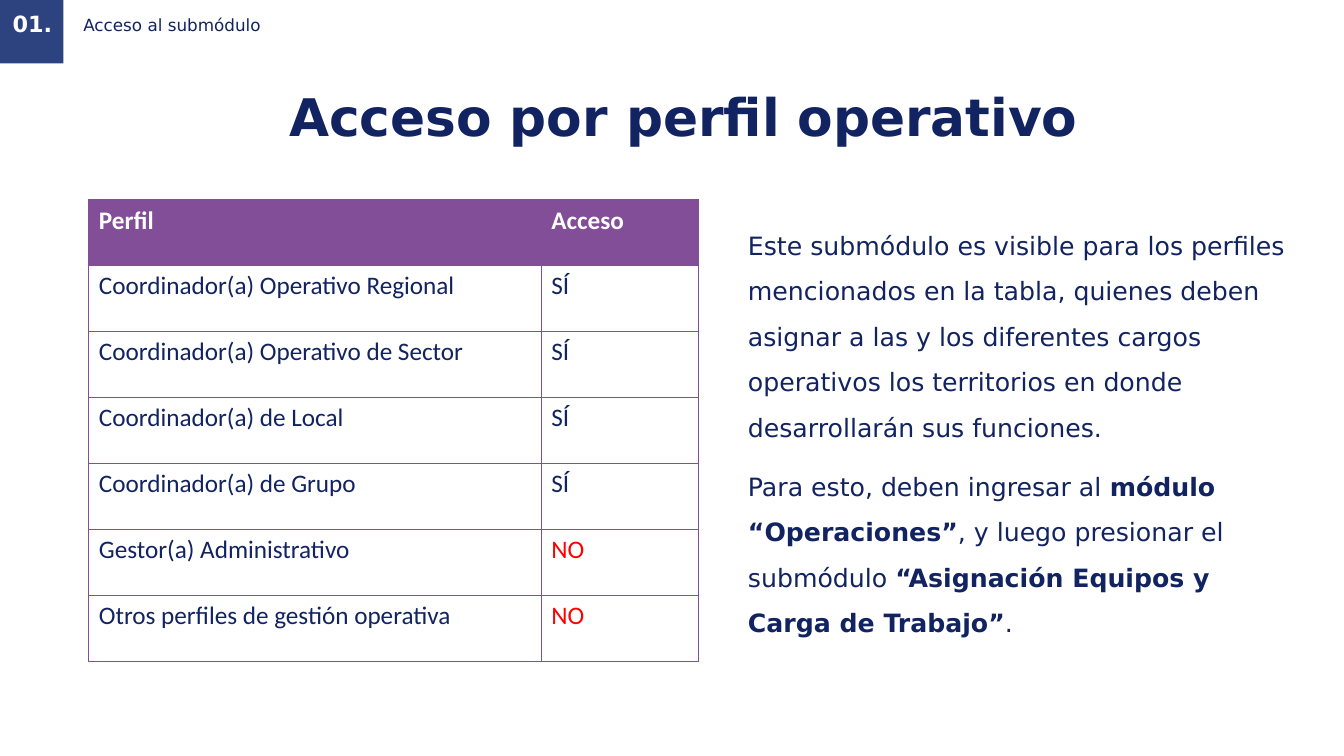
import dataclasses

import pptx
import pptx.dml.color
import pptx.enum.shapes
import pptx.enum.text
import pptx.oxml
import pptx.oxml.ns
import pptx.util

Cm = pptx.util.Cm
Align = pptx.enum.text.PP_ALIGN
Anchor = pptx.enum.text.MSO_ANCHOR


@dataclasses.dataclass(frozen=True)
class Theme:
    navy: str = "122361"
    blue: str = "2C437F"
    purple: str = "824E98"
    red: str = "FF0000"
    white: str = "FFFFFF"
    text_font: str = "DejaVu Sans"
    table_font: str = "Calibri"
    title_size: int = 37
    body_size: int = 18
    number_size: int = 16
    label_size: int = 12
    border_width: int = 1


def rgb(color):
    return pptx.dml.color.RGBColor.from_string(color)


class SlideBuilder:
    def __init__(self, slide, theme):
        self.slide = slide
        self.theme = theme

    def style(self, span, size, color, bold=False, font=None):
        span.font.name = font or self.theme.text_font
        span.font.size = pptx.util.Pt(size)
        span.font.color.rgb = rgb(color)
        span.font.bold = bold

    def rectangle(self, left, top, width, height, color):
        shape = self.slide.shapes.add_shape(
            pptx.enum.shapes.MSO_SHAPE.RECTANGLE,
            Cm(left), Cm(top), Cm(width), Cm(height))
        shape.shadow.inherit = False
        shape.fill.solid()
        shape.fill.fore_color.rgb = rgb(color)
        shape.line.fill.background()

    def text(self, area, paragraphs, size, color, align=Align.LEFT,
             anchor=Anchor.TOP, spacing=1.0, side_inset=0.0):
        """Each paragraph is a list of (wording, bold) pairs."""
        box = self.slide.shapes.add_textbox(*map(Cm, area))
        frame = box.text_frame
        frame.word_wrap = True
        frame.vertical_anchor = anchor
        frame.margin_left = frame.margin_right = Cm(side_inset)
        for index, pieces in enumerate(paragraphs):
            para = frame.add_paragraph() if index else frame.paragraphs[0]
            para.alignment = align
            para.line_spacing = spacing
            if index:
                para.space_before = pptx.util.Pt(10)
            for wording, bold in pieces:
                span = para.add_run()
                span.text = wording
                self.style(span, size, color, bold)

    def cell_borders(self, cell):
        properties = cell._tc.get_or_add_tcPr()
        width = pptx.util.Pt(self.theme.border_width)
        for side in ("lnL", "lnR", "lnT", "lnB"):
            properties.append(pptx.oxml.parse_xml(
                f'<a:{side} {pptx.oxml.ns.nsdecls("a")} w="{width}"><a:solidFill>'
                f'<a:srgbClr val="{self.theme.purple}"/></a:solidFill></a:{side}>'))

    def access_table(self, left, top, column_widths, row_height, rows):
        theme = self.theme
        table = self.slide.shapes.add_table(
            len(rows), len(column_widths), Cm(left), Cm(top),
            Cm(sum(column_widths)), Cm(row_height * len(rows))).table
        table.horz_banding = False
        for column, width in zip(table.columns, column_widths):
            column.width = Cm(width)
        for row_index, values in enumerate(rows):
            header = row_index == 0
            table.rows[row_index].height = Cm(row_height)
            for column_index, value in enumerate(values):
                cell = table.cell(row_index, column_index)
                self.cell_borders(cell)
                cell.fill.solid()
                cell.fill.fore_color.rgb = rgb(theme.purple if header else theme.white)
                cell.text_frame.text = value
                color = theme.navy
                if header:
                    color = theme.white
                elif value == "NO":
                    color = theme.red
                self.style(cell.text_frame.paragraphs[0].runs[0], theme.body_size,
                           color, header, theme.table_font)


def main():
    deck = pptx.Presentation()
    deck.slide_width, deck.slide_height = Cm(33.87), Cm(19.05)
    theme = Theme()
    page = SlideBuilder(deck.slides.add_slide(deck.slide_layouts[6]), theme)

    page.rectangle(0, 0, 1.6, 1.6, theme.blue)
    page.text((0, 0.15, 1.63, 0.97), [[("01.", True)]], theme.number_size,
              theme.white, Align.CENTER, Anchor.MIDDLE, 0.9, 0.25)
    page.text((2.1, -0.03, 30.25, 1.37), [[("Acceso al submódulo", False)]],
              theme.label_size, theme.navy, anchor=Anchor.MIDDLE, spacing=0.9)
    page.text((2.1, 2, 30.25, 3.2), [[("Acceso por perfil operativo", True)]],
              theme.title_size, theme.navy, Align.CENTER)

    page.access_table(2.24, 5.04, (11.4, 3.96), 1.66, [
        ("Perfil", "Acceso"),
        ("Coordinador(a) Operativo Regional", "SÍ"),
        ("Coordinador(a) Operativo de Sector", "SÍ"),
        ("Coordinador(a) de Local", "SÍ"),
        ("Coordinador(a) de Grupo", "SÍ"),
        ("Gestor(a) Administrativo", "NO"),
        ("Otros perfiles de gestión operativa", "NO"),
    ])

    page.text((18.85, 5.3, 13.8, 10.95), [
        [("Este submódulo es visible para los perfiles mencionados en la tabla, "
          "quienes deben asignar a las y los diferentes cargos operativos los "
          "territorios en donde desarrollarán sus funciones.", False)],
        [("Para esto, deben ingresar al ", False),
         ("módulo “Operaciones”", True),
         (", y luego presionar el submódulo ", False),
         ("“Asignación Equipos y Carga de Trabajo”", True),
         (".", False)],
    ], theme.body_size, theme.navy, spacing=1.5)

    deck.save("out.pptx")


if __name__ == "__main__":
    main()
